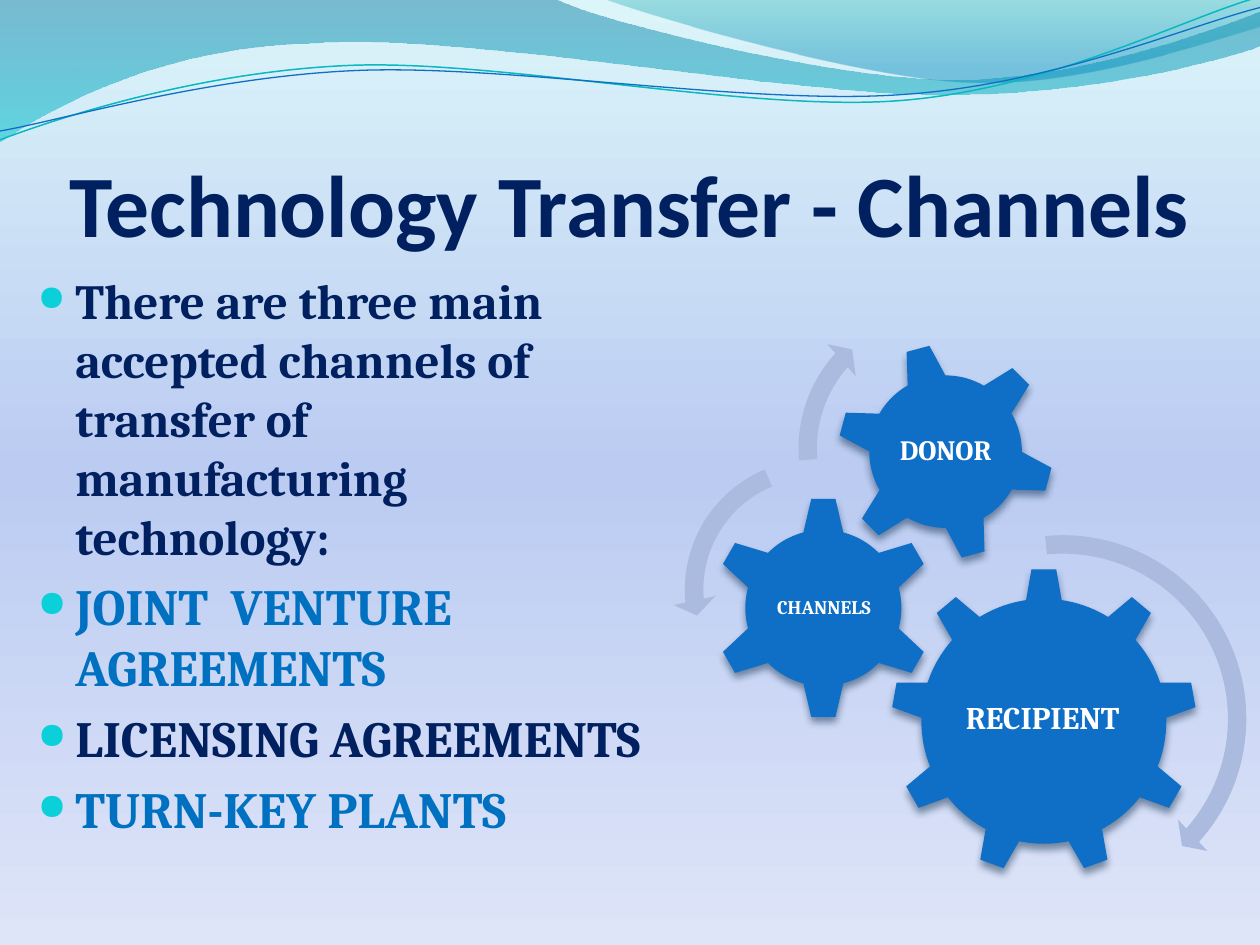
"""Build the technology transfer channels slide."""
from dataclasses import dataclass

from lxml import etree
from pptx import Presentation
from pptx.dml.color import RGBColor
from pptx.enum.shapes import MSO_SHAPE
from pptx.enum.text import MSO_ANCHOR, PP_ALIGN
from pptx.oxml.ns import qn
from pptx.util import Inches, Pt

GEAR_6, GEAR_9 = MSO_SHAPE.GEAR_6, MSO_SHAPE.GEAR_9
CLOCKWISE, COUNTER = MSO_SHAPE.CIRCULAR_ARROW, MSO_SHAPE.LEFT_CIRCULAR_ARROW
CENTER = PP_ALIGN.CENTER
TOP, MIDDLE, BOTTOM = MSO_ANCHOR.TOP, MSO_ANCHOR.MIDDLE, MSO_ANCHOR.BOTTOM
COLORS = {
    "navy": "002060", "blue": "0070C0", "white": "FFFFFF", "bullet": "0BD0D9",
    "gear": "0F6FC6", "arrow": "ABBBDF", "shadow": "042747", "teal": "0AB8BF",
    "sky": "DBF5F9", "lavender": "BBCBF2", "mist": "DEE5F8",
    "ocean": "0074A1", "aqua": "00C6CF", "green": "00A1A9", "azure": "008BBF",
}


@dataclass
class Wave:
    """An outline of points and cubic curves, with a gradient or a line."""
    start: tuple
    segments: list
    stops: list | None = None
    line: tuple | None = None


@dataclass
class Gear:
    """A labelled gear: box and label box are left, top, width, height."""
    label: str
    kind: int
    box: tuple
    label_box: tuple
    size: int
    inset: float
    rotation: int = 0


@dataclass
class Turn:
    """A curved arrow; thickness and head are percentages of its size."""
    kind: int
    left: float
    top: float
    size: float
    thickness: float
    angles: tuple
    head: float


WAVES = [
    Wave((0, 0), [
        (4.4, -0.01), (4.76, 0.17, 6.64, 0.63, 7.58, 0.63),
        (8.53, 0.63, 9.58, 0.26, 10, 0.09), (10.01, 0.36),
        (9.83, 0.44, 8.7, 0.76, 7.46, 0.75), (6.22, 0.75, 3.82, 0.28, 2.57, 0.34),
        (1.29, 0.36, 0.46, 0.83, -0.01, 1.13), (0, 0),
    ], stops=[(0, "ocean", 45), (100, "aqua", 55)]),
    Wave((4.79, -0.01), [
        (5.09, 0.11, 6.82, 0.62, 7.69, 0.65), (8.56, 0.69, 9.61, 0.32, 10, 0.21),
        (10, 0), (4.79, -0.01),
    ], stops=[(0, "green", 30), (80, "azure", 45)]),
    Wave((0, 1.11), [
        (0.48, 0.93, 1.58, 0.57, 2.77, 0.52), (3.95, 0.47, 5.93, 0.89, 7.13, 0.8),
        (8.33, 0.71, 9.38, 0.15, 9.98, -0.02),
    ], line=("teal", 0.85)),
    Wave((0, 1.04), [
        (0.47, 0.96, 1.64, 0.61, 2.83, 0.56), (4.03, 0.51, 5.97, 0.84, 7.17, 0.75),
        (8.36, 0.67, 9.41, 0.21, 10, 0.06),
    ], line=("gear", 0.75)),
]
CHANNELS = [
    ("There are three main accepted channels of transfer of manufacturing technology:",
     28, "navy"),
    ("JOINT  VENTURE AGREEMENTS", 29, "blue"),
    ("LICENSING AGREEMENTS", 29, "navy"),
    ("TURN-KEY PLANTS", 29, "blue"),
]
GEARS = [
    Gear("RECIPIENT", GEAR_9, (7.07, 4.51, 2.43, 2.43), (7.55, 5.08, 1.45, 1.25), 18, 0.03),
    Gear("CHANNELS", GEAR_6, (5.65, 3.94, 1.77, 1.77), (6.1, 4.39, 0.88, 0.87), 11, 0.02),
    Gear("DONOR", GEAR_6, (6.64, 2.72, 1.73, 1.73), (7.02, 3.1, 0.97, 0.97), 16, 0.02, 345),
]
TURNS = [
    Turn(CLOCKWISE, 6.88, 4.15, 3.11, 4.7, (2.99, 25.12, 158.69), 5.5),
    Turn(COUNTER, 5.34, 3.55, 2.26, 6.5, (4.3, 104.89, 148.38), 7.5),
    Turn(CLOCKWISE, 6.24, 2.34, 2.44, 6, (3.94, 133.14, 105.08), 7),
]


def rgb(name: str) -> RGBColor:
    """Look up a named colour."""
    return RGBColor.from_string(COLORS[name])


def add_color(parent, name: str, opacity: int):
    """Append a colour with its opacity in percent."""
    color = etree.SubElement(parent, qn("a:srgbClr"), val=COLORS[name])
    if opacity < 100:
        etree.SubElement(color, qn("a:alpha"), val=str(opacity * 1000))


def paint_gradient(fill, owner, stops: list):
    """Fill from top to bottom with (position, colour, opacity) stops."""
    fill.gradient()
    fill.gradient_angle = 270
    stop_list = next(owner.iter(qn("a:gsLst")))
    for old_stop in list(stop_list):
        stop_list.remove(old_stop)
    for position, name, opacity in stops:
        stop = etree.SubElement(stop_list, qn("a:gs"), pos=str(position * 1000))
        add_color(stop, name, opacity)


def bend_segments(ribbon, segments: list):
    """Turn the straight segments that have control points into cubic curves."""
    straights = list(ribbon._element.iter(qn("a:lnTo")))
    for straight, segment in zip(straights, segments):
        if len(segment) == 2:
            continue
        straight.tag = qn("a:cubicBezTo")
        for index in (0, 2):
            x, y = Inches(segment[index]), Inches(segment[index + 1])
            control = etree.Element(qn("a:pt"), x=str(x - ribbon.left), y=str(y - ribbon.top))
            straight.insert(index // 2, control)


def draw_wave(slide, wave: Wave):
    """Draw one header wave."""
    builder = slide.shapes.build_freeform(*map(Inches, wave.start))
    ends = [tuple(map(Inches, segment[-2:])) for segment in wave.segments]
    builder.add_line_segments(ends, close=wave.line is None)
    ribbon = builder.convert_to_shape()
    bend_segments(ribbon, wave.segments)
    ribbon.shadow.inherit = False
    if wave.line:
        ribbon.fill.background()
        name, width = wave.line
        ribbon.line.color.rgb = rgb(name)
        ribbon.line.width = Pt(width)
    else:
        paint_gradient(ribbon.fill, ribbon._element.spPr, wave.stops)
        ribbon.line.fill.background()


def add_frame(slide, box: tuple, anchor, insets: tuple):
    """Add a wrapping text box and return its frame."""
    frame = slide.shapes.add_textbox(*map(Inches, box)).text_frame
    left, top, right, bottom = map(Inches, insets)
    layout = {"word_wrap": True, "vertical_anchor": anchor, "margin_left": left,
              "margin_top": top, "margin_right": right, "margin_bottom": bottom}
    for name, value in layout.items():
        setattr(frame, name, value)
    return frame


def write(paragraph, text: str, size: float, color: str, face="Cambria", **spacing):
    """Write a bold run and set the paragraph's spacing."""
    run = paragraph.add_run()
    run.text = text
    for name, value in {"name": face, "size": Pt(size), "bold": True}.items():
        setattr(run.font, name, value)
    run.font.color.rgb = rgb(color)
    for name, value in spacing.items():
        setattr(paragraph, name, value)


def add_bullet(paragraph):
    """Give the paragraph a hanging round bullet."""
    properties = paragraph._p.get_or_add_pPr()
    properties.set("marL", str(Inches(0.3)))
    properties.set("indent", str(-Inches(0.3)))
    add_color(etree.SubElement(properties, qn("a:buClr")), "bullet", 100)
    etree.SubElement(properties, qn("a:buSzPct"), val="72000")
    etree.SubElement(properties, qn("a:buChar"), char="●")


def add_solid(slide, kind, box: tuple, color: str):
    """Add a preset shape in one colour without a line."""
    solid = slide.shapes.add_shape(kind, *map(Inches, box))
    solid.shadow.inherit = False
    solid.fill.solid()
    solid.fill.fore_color.rgb = rgb(color)
    solid.line.fill.background()
    return solid


def draw_gear(slide, gear: Gear):
    """Draw a gear with a soft shadow and its label."""
    wheel = add_solid(slide, gear.kind, gear.box, "gear")
    wheel.rotation = gear.rotation
    effects = wheel._element.spPr.find(qn("a:effectLst"))
    shadow = etree.SubElement(effects, qn("a:outerShdw"), blurRad=str(Pt(4.5)),
                              dist=str(Pt(3)), dir="5400000", rotWithShape="0")
    add_color(shadow, "shadow", 48)
    frame = add_frame(slide, gear.label_box, MIDDLE, (gear.inset,) * 4)
    write(frame.paragraphs[0], gear.label, gear.size, "white",
          alignment=CENTER, line_spacing=0.9)


def draw_turn(slide, turn: Turn):
    """Draw a curved arrow beside a gear."""
    arrow = add_solid(slide, turn.kind, (turn.left, turn.top, turn.size, turn.size), "arrow")
    for index, value in enumerate((turn.thickness / 100, *turn.angles, turn.head / 100)):
        arrow.adjustments[index] = value


def main():
    """Build and save the slide."""
    deck = Presentation()
    deck.slide_width, deck.slide_height = Inches(10), Inches(7.5)
    slide = deck.slides.add_slide(deck.slide_layouts[6])
    paint_gradient(slide.background.fill, slide._element,
                   [(0, "sky", 100), (50, "lavender", 100), (100, "mist", 100)])
    for wave in WAVES:
        draw_wave(slide, wave)
    title = add_frame(slide, (0.5, 0.77, 9, 1.25), BOTTOM, (0, 0.05, 0, 0))
    write(title.paragraphs[0], "Technology Transfer - Channels", 50, "navy", "Calibri",
          alignment=CENTER)
    body = add_frame(slide, (0.2, 2.1, 5.04, 4.85), TOP, (0.1, 0.05, 0.1, 0.05))
    for index, (text, size, color) in enumerate(CHANNELS):
        paragraph = body.add_paragraph() if index else body.paragraphs[0]
        write(paragraph, text, size, color, space_before=Pt(size * 0.2))
        add_bullet(paragraph)
    for gear in GEARS:
        draw_gear(slide, gear)
    for turn in TURNS:
        draw_turn(slide, turn)
    deck.save("out.pptx")


if __name__ == "__main__":
    main()
